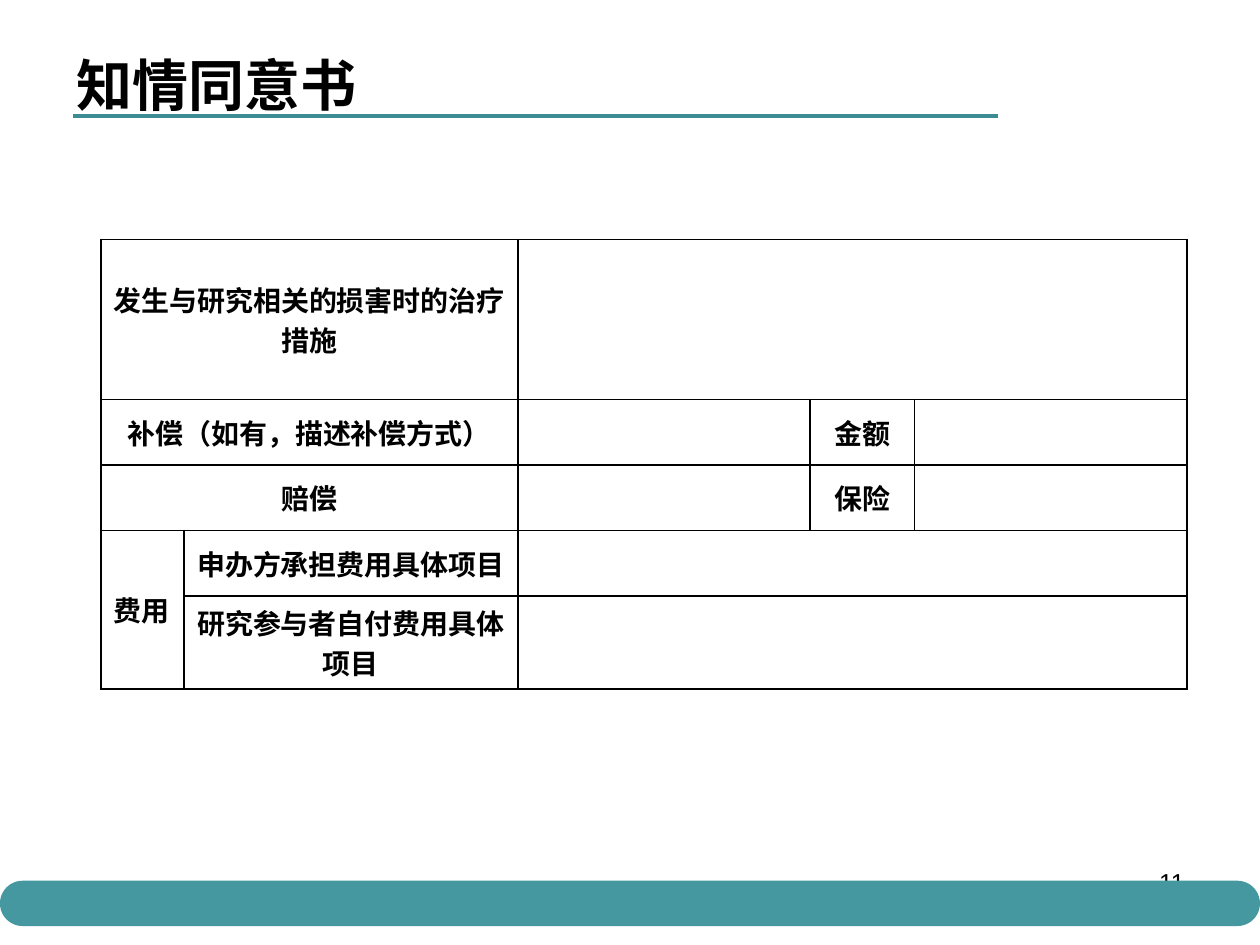
import pptx
import pptx.dml.color
import pptx.enum.shapes
import pptx.enum.text
import pptx.oxml.ns
import pptx.util
from lxml import etree

SLIDE_W, SLIDE_H = 10, 7.5
CJK = "Noto Sans CJK SC"
BLACK = "000000"
ALIGN = pptx.enum.text.PP_ALIGN
MIDDLE = pptx.enum.text.MSO_ANCHOR.MIDDLE
inch = pptx.util.Inches
qn = pptx.oxml.ns.qn

COLUMNS = [0.66, 2.65, 2.32, 0.83, 2.16]
# The last row holds a label of two lines
ROWS = [0.87, 1.27] + [0.52] * 3 + [0.74]
# (row, column, rows spanned, columns spanned)
SPANS = [(0, 0, 1, 5), (1, 0, 1, 2), (1, 2, 1, 3), (2, 0, 1, 2), (3, 0, 1, 2),
         (4, 0, 2, 1), (4, 2, 1, 3), (5, 2, 1, 3)]
LABELS = {
    (1, 0): "发生与研究相关的损害时的治疗措施",
    (2, 0): "补偿（如有，描述补偿方式）",
    (2, 3): "金额",
    (3, 0): "赔偿",
    (3, 3): "保险",
    (4, 0): "费用",
    (4, 1): "申办方承担费用具体项目",
    (5, 1): "研究参与者自付费用具体项目",
}


def color(hex_code):
    return pptx.dml.color.RGBColor.from_string(hex_code)


def add_run(paragraph, text, size, font_name, bold=False):
    run = paragraph.add_run()
    run.text = text
    run.font.size = pptx.util.Pt(size)
    run.font.bold = bold
    run.font.color.rgb = color(BLACK)
    run.font.name = font_name
    east_asian = etree.SubElement(run.font._element, qn("a:ea"))
    east_asian.set("typeface", font_name)


def add_page_number(slide, left, top, width, height):
    number = slide.shapes.add_textbox(*map(inch, (left, top, width, height))).text_frame
    number.word_wrap = True
    number.paragraphs[0].alignment = ALIGN.RIGHT
    add_run(number.paragraphs[0], "11", 14, "Arial")


def add_title(slide, left, top, width, height):
    title = slide.shapes.add_textbox(*map(inch, (left, top, width, height))).text_frame
    title.word_wrap = True
    title.vertical_anchor = MIDDLE
    title.margin_left = inch(0.19)
    add_run(title.paragraphs[0], "知情同意书", 32, CJK, bold=True)


def add_title_rule(slide, left, y, width):
    rule = slide.shapes.add_connector(
        pptx.enum.shapes.MSO_CONNECTOR.STRAIGHT,
        inch(left), inch(y), inch(left + width), inch(y))
    rule.line.color.rgb = color("3C8C93")
    rule.line.width = pptx.util.Pt(2.25)
    etree.SubElement(rule._element.spPr, qn("a:effectLst"))


def set_borders(cell, drawn_sides):
    properties = cell._tc.get_or_add_tcPr()
    for position, side in enumerate("LRTB"):
        border = etree.Element(qn(f"a:ln{side}"), w=str(pptx.util.Pt(1)))
        if side in drawn_sides:
            fill = etree.SubElement(border, qn("a:solidFill"))
            etree.SubElement(fill, qn("a:srgbClr"), val=BLACK)
        else:
            etree.SubElement(border, qn("a:noFill"))
        properties.insert(position, border)


def add_consent_table(slide, left, top, width, height):
    table = slide.shapes.add_table(
        len(ROWS), len(COLUMNS), *map(inch, (left, top, width, height))).table
    table.first_row = table.horz_banding = False
    for column, share in zip(table.columns, COLUMNS):
        column.width = inch(width * share / sum(COLUMNS))
    for row, share in zip(table.rows, ROWS):
        row.height = inch(height * share / sum(ROWS))

    for r in range(len(ROWS)):
        for c in range(len(COLUMNS)):
            cell = table.cell(r, c)
            cell.fill.background()
            set_borders(cell, "LRTB" if r else "B")
    for r, c, down, across in SPANS:
        table.cell(r, c).merge(table.cell(r + down - 1, c + across - 1))

    for (r, c), label in LABELS.items():
        cell = table.cell(r, c)
        cell.vertical_anchor = MIDDLE
        paragraph = cell.text_frame.paragraphs[0]
        paragraph.alignment = ALIGN.LEFT if label == "费用" else ALIGN.CENTER
        add_run(paragraph, label, 16, CJK, bold=True)


def add_footer_bar(slide, left, top, width, height):
    bar = slide.shapes.add_shape(
        pptx.enum.shapes.MSO_SHAPE.ROUNDED_RECTANGLE,
        *map(inch, (left, top, width, height)))
    bar.adjustments[0] = 0.5
    bar.shadow.inherit = False
    bar.fill.solid()
    bar.fill.fore_color.rgb = color("4597A0")
    bar.line.fill.background()


def main():
    deck = pptx.Presentation()
    deck.slide_width, deck.slide_height = inch(SLIDE_W), inch(SLIDE_H)
    slide = deck.slides.add_slide(deck.slide_layouts[6])
    add_page_number(slide, 7.17, 6.83, 2.33, 0.52)
    add_title(slide, 0.42, 0.33, 9.08, 0.67)
    add_consent_table(slide, 0.8, 1.03, sum(COLUMNS), sum(ROWS))
    add_footer_bar(slide, 0, 6.99, SLIDE_W, 0.36)
    add_title_rule(slide, 0.58, 0.92, 7.34)
    deck.save("out.pptx")


if __name__ == "__main__":
    main()
